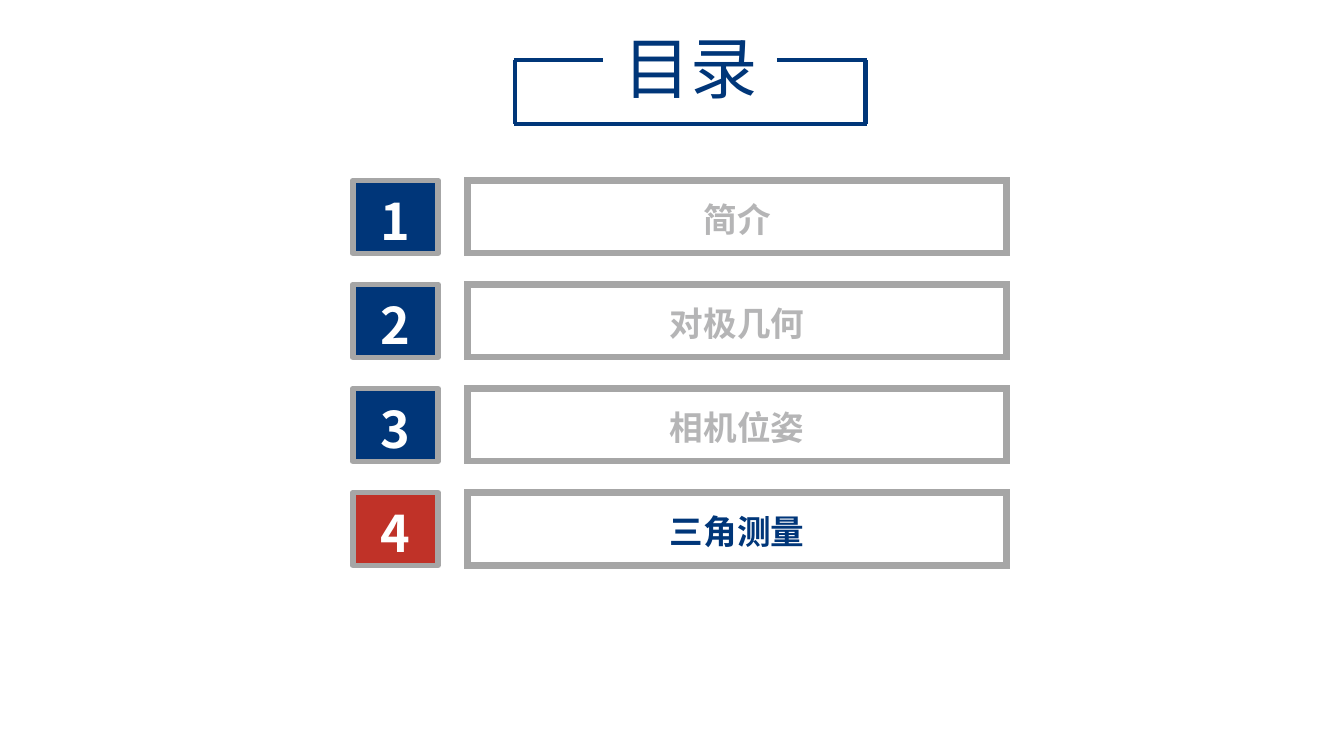
from lxml import etree
from pptx import Presentation
from pptx import util as u
from pptx.dml import color as c
from pptx.enum import shapes, text
from pptx.oxml import ns

NAVY, RED, GREY, PALE, WHITE = "003679", "C03228", "A6A6A6", "B5B5B6", "FFFFFF"
FONT = "Noto Sans CJK SC"
TOPICS = ["简介", "对极几何", "相机位姿", "三角测量"]
CURRENT = 4


def paint(value):
    """Return the colour for a hex string."""
    return c.RGBColor.from_string(value)


def write(shape, words, *, size, color, bold=False, spacing=1.0, bottom=0):
    """Put one centred line of formatted text into a shape."""
    frame = shape.text_frame
    frame.word_wrap = True
    frame.auto_size = text.MSO_AUTO_SIZE.NONE
    frame.vertical_anchor = text.MSO_ANCHOR.MIDDLE
    frame.margin_left = frame.margin_right = frame.margin_top = 0
    frame.margin_bottom = u.Pt(bottom)
    para = frame.paragraphs[0]
    para.alignment = text.PP_ALIGN.CENTER
    para.line_spacing = spacing
    span = para.add_run()
    span.text = words
    span.font.size = u.Pt(size)
    span.font.bold = bold
    span.font.color.rgb = paint(color)
    span.font.name = FONT
    east_asian = etree.SubElement(span.font._element, ns.qn("a:ea"))
    east_asian.set("typeface", FONT)


def add_box(page, left, top, width, height, *, border, fill=None):
    """Add a grey-bordered rectangle, hollow unless a fill is given."""
    box = page.shapes.add_shape(
        shapes.MSO_SHAPE.RECTANGLE, u.Pt(left), u.Pt(top), u.Pt(width), u.Pt(height)
    )
    box.shadow.inherit = False
    box.line.color.rgb = paint(GREY)
    box.line.width = u.Pt(border)
    if fill:
        box.fill.solid()
        box.fill.fore_color.rgb = paint(fill)
    else:
        box.fill.background()
        miter = etree.SubElement(box.line._get_or_add_ln(), ns.qn("a:miter"))
        miter.set("lim", "800000")
    return box


def add_line(page, x1, y1, x2, y2):
    """Add one straight navy line."""
    line = page.shapes.add_connector(
        shapes.MSO_CONNECTOR.STRAIGHT, u.Pt(x1), u.Pt(y1), u.Pt(x2), u.Pt(y2)
    )
    line.line.color.rgb = paint(NAVY)
    line.line.width = u.Pt(3)
    etree.SubElement(line._element.spPr, ns.qn("a:effectLst"))


def add_heading(page, left, top, width, height):
    """Place the title in a frame whose top edge is open in the middle."""
    title = page.shapes.title
    title.left, title.top = u.Pt(left + 53), u.Pt(top - 25)
    title.width, title.height = u.Pt(width - 106), u.Pt(65.5)
    write(title, "目录", size=48, color=NAVY, bottom=6)
    right, bottom, stub = left + width, top + height, 64
    add_line(page, left, top, left + stub, top)
    add_line(page, right - stub, top, right, top)
    add_line(page, left, bottom, right, bottom)
    for side in (left + 0.75, right - 0.75):
        add_line(page, side, top, side, bottom)


def add_topic(page, left, top, width, height, number, topic):
    """Place a numbered tile and its topic bar, highlighting the current one."""
    active = number == CURRENT
    tile_width, gap = 61, 21
    tile = add_box(page, left, top, tile_width, height, border=4, fill=RED if active else NAVY)
    write(tile, str(number), size=36, color=WHITE, bold=True, spacing=1.1)
    offset = tile_width + gap
    bar = add_box(page, left + offset, top, width - offset, height, border=4.5)
    write(bar, topic, size=24, color=NAVY if active else PALE, bold=True, spacing=1.1)


def main():
    """Build the contents slide and save it."""
    deck = Presentation()
    deck.slide_width, deck.slide_height = u.Pt(960), u.Pt(540)
    page = deck.slides.add_slide(deck.slide_layouts[5])
    add_heading(page, 367, 43, 252, 45.5)
    for index, topic in enumerate(TOPICS):
        add_topic(page, 252, 129 + index * 74.3, 467, 52, index + 1, topic)
    deck.save("out.pptx")


if __name__ == "__main__":
    main()
